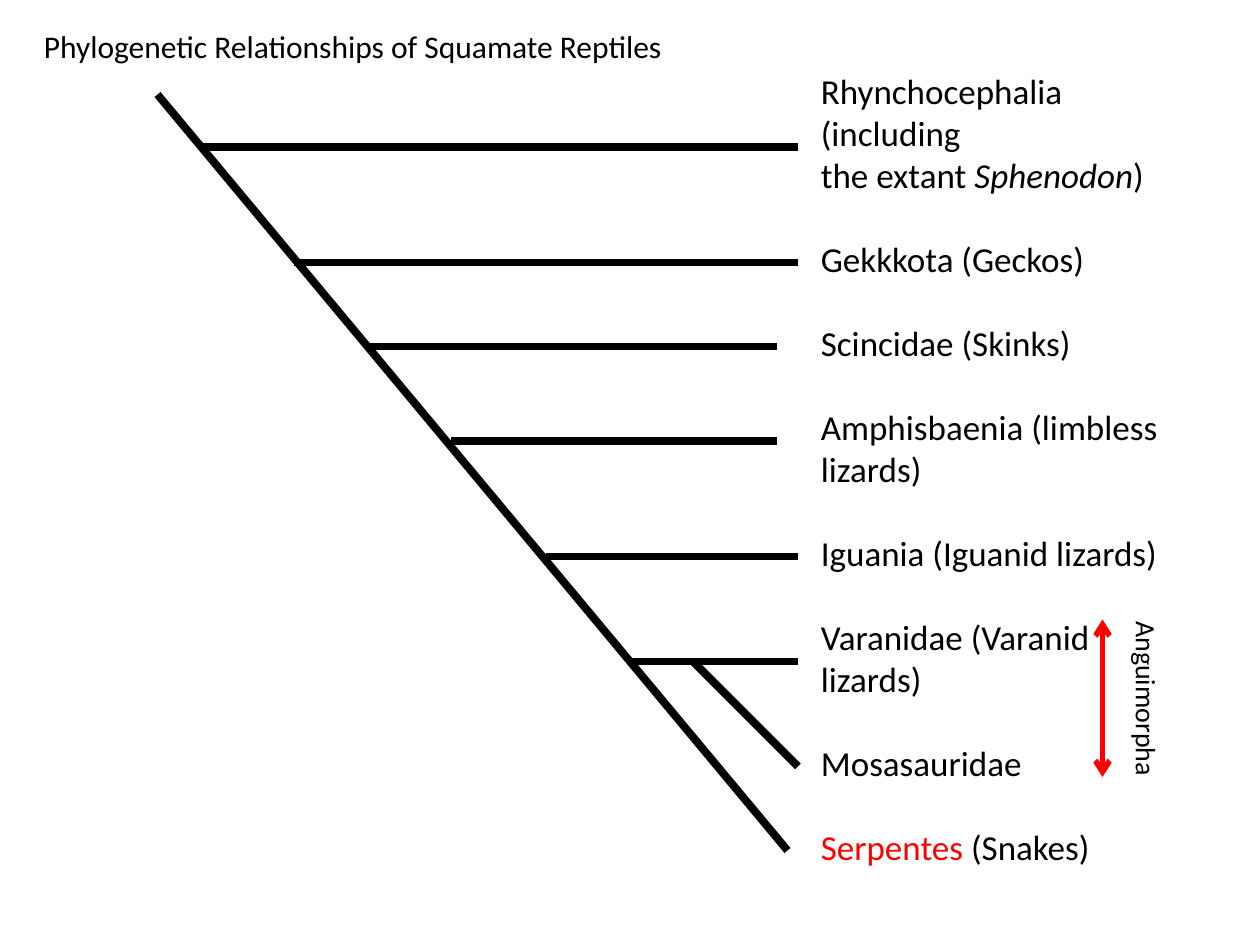
import pptx
import pptx.dml.color
import pptx.enum.shapes
import pptx.enum.text
import pptx.oxml
import pptx.oxml.ns
import pptx.util

Pt = pptx.util.Pt
COLORS = {"text": "000000", "branch": "000000", "accent": "FF0000"}
FONT = "Calibri"
LINE_HEIGHT = 24

# Each taxon is a list of paragraphs; each paragraph is a list of (text, format) runs
TAXA = [
    [[("Rhynchocephalia (including", {})],
     [("the extant ", {}), ("Sphenodon", {"italic": True}), (")", {})]],
    [[("Gekkkota (Geckos)", {})]],
    [[("Scincidae (Skinks)", {})]],
    [[("Amphisbaenia (limbless lizards)", {})]],
    [[("Iguania (Iguanid lizards)", {})]],
    [[("Varanidae (Varanid lizards)", {})]],
    [[("Mosasauridae", {})]],
    [[("Serpentes", {"color": "accent"}), (" (Snakes)", {})]],
]

# Horizontal branches, relative to the tree box: (start x, end x, y)
BRANCHES = [
    (24, 366, 30),
    (78, 366, 96),
    (120, 354, 144),
    (168, 354, 198),
    (222, 366, 264),
    (270, 366, 324),
]


def rgb(name):
    return pptx.dml.color.RGBColor.from_string(COLORS[name])


def add_run(paragraph, text, size, color="text", **formats):
    run = paragraph.add_run()
    run.text = text
    values = {"name": FONT, "size": Pt(size), **formats}
    for attribute, value in values.items():
        setattr(run.font, attribute, value)
    run.font.color.rgb = rgb(color)


def add_text_box(slide, box, wrap):
    shape = slide.shapes.add_textbox(*map(Pt, box))
    values = {"word_wrap": wrap,
              "auto_size": pptx.enum.text.MSO_AUTO_SIZE.SHAPE_TO_FIT_TEXT}
    for attribute, value in values.items():
        setattr(shape.text_frame, attribute, value)
    return shape


def add_line(slide, start, end, color="branch", width=4.5, arrows=False):
    connector = slide.shapes.add_connector(
        pptx.enum.shapes.MSO_CONNECTOR.STRAIGHT, *map(Pt, (*start, *end)))
    connector.line.color.rgb = rgb(color)
    connector.line.width = Pt(width)
    if arrows:
        outline = connector.line._get_or_add_ln()
        for tag in ("a:headEnd", "a:tailEnd"):
            arrowhead = pptx.oxml.parse_xml(
                f'<{tag} {pptx.oxml.ns.nsdecls("a")} type="arrow"/>')
            outline.append(arrowhead)
    effects = pptx.oxml.parse_xml(
        f'<a:effectLst {pptx.oxml.ns.nsdecls("a")}/>')
    connector._element.spPr.append(effects)


def add_label(slide, box, text, size, rotation=0):
    shape = add_text_box(slide, box, wrap=False)
    shape.rotation = rotation
    add_run(shape.text_frame.paragraphs[0], text, size)


def add_tree(slide, box):
    left, top, width, height = box
    # Main stem
    add_line(slide, (left, top), (left + width, top + height))
    # Side branches
    for start, end, y in BRANCHES:
        add_line(slide, (left + start, top + y), (left + end, top + y))
    # Mosasaur branch, which leaves the varanid branch
    add_line(slide, (left + 306, top + 324), (left + 366, top + 384))


def add_taxa(slide, box):
    frame = add_text_box(slide, box, wrap=True).text_frame
    paragraph = None
    for taxon in TAXA:
        for index, runs in enumerate(taxon):
            is_first = paragraph is None
            paragraph = frame.paragraphs[0] if is_first else frame.add_paragraph()
            if index == 0 and not is_first:
                paragraph.space_before = Pt(LINE_HEIGHT)
            for text, formats in runs:
                add_run(paragraph, text, 20, **formats)


def add_clade_marker(slide, box):
    left, top, width, height = box
    # Double arrow along the left side
    add_line(slide, (left, top), (left, top + height), "accent", 3, arrows=True)
    # Name, turned to read downwards
    label_width, label_height = 104, 26.6
    label_box = (left + width - (label_width + label_height) / 2,
                 top + (height - label_height) / 2 + 0.9,
                 label_width, label_height)
    add_label(slide, label_box, "Anguimorpha", 16, rotation=90)


def main():
    presentation = pptx.Presentation()
    presentation.slide_width = Pt(720)
    presentation.slide_height = Pt(540)
    slide = presentation.slides.add_slide(presentation.slide_layouts[6])

    add_label(slide, (18, 12, 372, 29),
              "Phylogenetic Relationships of Squamate Reptiles", 18)
    add_taxa(slide, (462, 36, 222, 468))
    add_tree(slide, (90, 54, 360, 432))
    add_clade_marker(slide, (630, 354, 38.6, 90))

    presentation.save("out.pptx")


if __name__ == "__main__":
    main()
